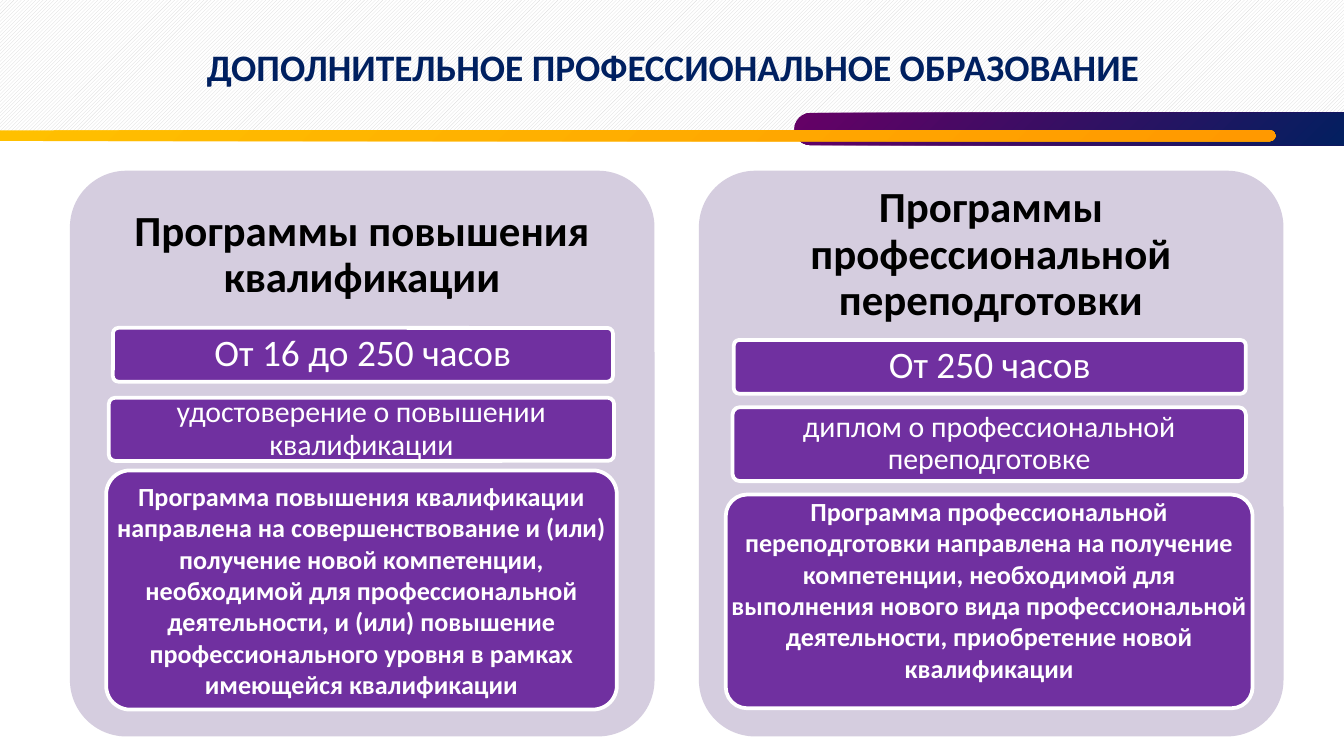
from dataclasses import dataclass

from pptx import Presentation
from pptx.dml.color import RGBColor
from pptx.enum.dml import MSO_PATTERN
from pptx.enum.shapes import MSO_SHAPE
from pptx.enum.text import MSO_ANCHOR, PP_ALIGN
from pptx.util import Inches, Length, Pt

WHITE = RGBColor(0xFF, 0xFF, 0xFF)
BLACK = RGBColor(0x00, 0x00, 0x00)
HATCH = RGBColor(0xD9, 0xD9, 0xD9)
NAVY = RGBColor(0x00, 0x20, 0x60)
PLUM = RGBColor(0x66, 0x00, 0x66)
ORANGE = RGBColor(0xFF, 0x99, 0x00)
AMBER = RGBColor(0xFF, 0xC0, 0x00)
LILAC = RGBColor(0xD5, 0xCD, 0xDF)
PURPLE = RGBColor(0x70, 0x30, 0xA0)

COLS, ROWS = 100, 56.25
CELL = Inches(0.1)


@dataclass(frozen=True)
class Box:
    x: float
    y: float
    w: float
    h: float

    def emu(self) -> list[Length]:
        return [Length(round(v * CELL)) for v in (self.x, self.y, self.w, self.h)]


@dataclass(frozen=True)
class Style:
    size: float
    color: RGBColor = WHITE
    bold: bool = False
    spacing: float = 0.9
    pad_x: float = 0.4
    pad_y: float = 0.3


@dataclass(frozen=True)
class Card:
    box: Box
    text: str
    style: Style
    lift: float = 0


@dataclass(frozen=True)
class Panel:
    x: float
    heading: str
    cards: tuple[Card, ...]


TITLE = Style(20, NAVY, True, 1, 1, 0.5)
HEADING = Style(23, BLACK, True, pad_x=1, pad_y=1)
HOURS = Style(20, pad_x=0.6, pad_y=0.4)
DOCUMENT = Style(16)
PURPOSE = Style(14, bold=True, spacing=1)

PANELS = (
    Panel(5.2, "Программы повышения квалификации", (
        Card(Box(8.4, 24.4, 37.2, 4), "От 16 до 250 часов", HOURS),
        Card(Box(8.1, 29.6, 37.6, 4.7), "удостоверение о повышении квалификации", DOCUMENT),
        Card(Box(7.9, 35, 38, 17.8),
             "Программа повышения квалификации направлена на совершенствование и (или) "
             "получение новой компетенции, необходимой для профессиональной деятельности, "
             "и (или) повышение профессионального уровня в рамках имеющейся квалификации",
             PURPOSE),
    )),
    Panel(52, "Программы профессиональной переподготовки", (
        Card(Box(54.6, 25.3, 38.1, 4), "От 250 часов", HOURS),
        Card(Box(54.5, 30.3, 38.2, 5.5), "диплом о профессиональной переподготовке", DOCUMENT),
        Card(Box(54, 36.8, 39.2, 15.9),
             "Программа профессиональной переподготовки направлена на получение компетенции, "
             "необходимой для выполнения нового вида профессиональной деятельности, "
             "приобретение новой квалификации",
             PURPOSE, lift=1.8),
    )),
)


def add_block(s, box: Box, kind=MSO_SHAPE.ROUNDED_RECTANGLE, adj: float = 0.1):
    """Add a shape without shadow or outline."""
    sp = s.shapes.add_shape(kind, *box.emu())
    sp.shadow.inherit = False
    sp.line.fill.background()
    if kind == MSO_SHAPE.ROUNDED_RECTANGLE:
        sp.adjustments[0] = adj
    return sp


def add_solid(s, box: Box, color: RGBColor, outlined: bool = False) -> None:
    """Add a rounded block in one colour, with a white outline if asked."""
    sp = add_block(s, box)
    sp.fill.solid()
    sp.fill.fore_color.rgb = color
    if outlined:
        sp.line.color.rgb = WHITE
        sp.line.width = Pt(2)


def add_bar(s, box: Box, left: RGBColor, right: RGBColor) -> None:
    """Add a pill-shaped bar with a diagonal gradient."""
    sp = add_block(s, box, adj=0.5)
    sp.fill.gradient()
    sp.fill.gradient_angle = 315
    for stop, color, pos in zip(sp.fill.gradient_stops, (left, right), (0, 1)):
        stop.color.rgb = color
        stop.position = pos


def add_text(s, box: Box, text: str, style: Style, lift: float = 0) -> None:
    """Add a centred, wrapped text; lift widens its lower margin."""
    tf = s.shapes.add_textbox(*box.emu()).text_frame
    pad_x, pad_y = round(style.pad_x * CELL), round(style.pad_y * CELL)
    frame = dict(word_wrap=True, vertical_anchor=MSO_ANCHOR.MIDDLE,
                 margin_left=pad_x, margin_right=pad_x,
                 margin_top=pad_y, margin_bottom=pad_y + round(lift * CELL))
    p = tf.paragraphs[0]
    r = p.add_run()
    r.text = text
    formats = (
        (tf, frame),
        (p, dict(alignment=PP_ALIGN.CENTER, line_spacing=style.spacing)),
        (r.font, dict(name="Calibri", size=Pt(style.size), bold=style.bold)),
    )
    for target, values in formats:
        for name, value in values.items():
            setattr(target, name, value)
    r.font.color.rgb = style.color


def add_header(s) -> None:
    """Add the hatched band, the two bars and the title."""
    band = add_block(s, Box(0, 0, COLS, 9.8), MSO_SHAPE.RECTANGLE)
    band.fill.patterned()
    band.fill.pattern = MSO_PATTERN.LIGHT_UPWARD_DIAGONAL
    band.fill.fore_color.rgb = HATCH
    band.fill.back_color.rgb = WHITE
    add_bar(s, Box(59.1, 8.4, 42.1, 2.4), PLUM, NAVY)
    add_bar(s, Box(-0.8, 9.7, 95.7, 0.8), AMBER, ORANGE)
    add_text(s, Box(2.8, 1.1, 94.6, 7.7), "ДОПОЛНИТЕЛЬНОЕ ПРОФЕССИОНАЛЬНОЕ ОБРАЗОВАНИЕ", TITLE)


def add_panel(s, panel: Panel) -> None:
    """Add a programme panel with its heading and cards."""
    add_solid(s, Box(panel.x, 12.7, 43.5, 42.1), LILAC)
    add_text(s, Box(panel.x, 12.7, 43.5, 12.6), panel.heading, HEADING)
    for card in panel.cards:
        add_solid(s, card.box, PURPLE, outlined=True)
        add_text(s, card.box, card.text, card.style, card.lift)


def main() -> None:
    """Build and save the slide."""
    prs = Presentation()
    prs.slide_width, prs.slide_height = COLS * CELL, round(ROWS * CELL)
    s = prs.slides.add_slide(prs.slide_layouts[6])
    add_header(s)
    for panel in PANELS:
        add_panel(s, panel)
    prs.save("out.pptx")


if __name__ == "__main__":
    main()
